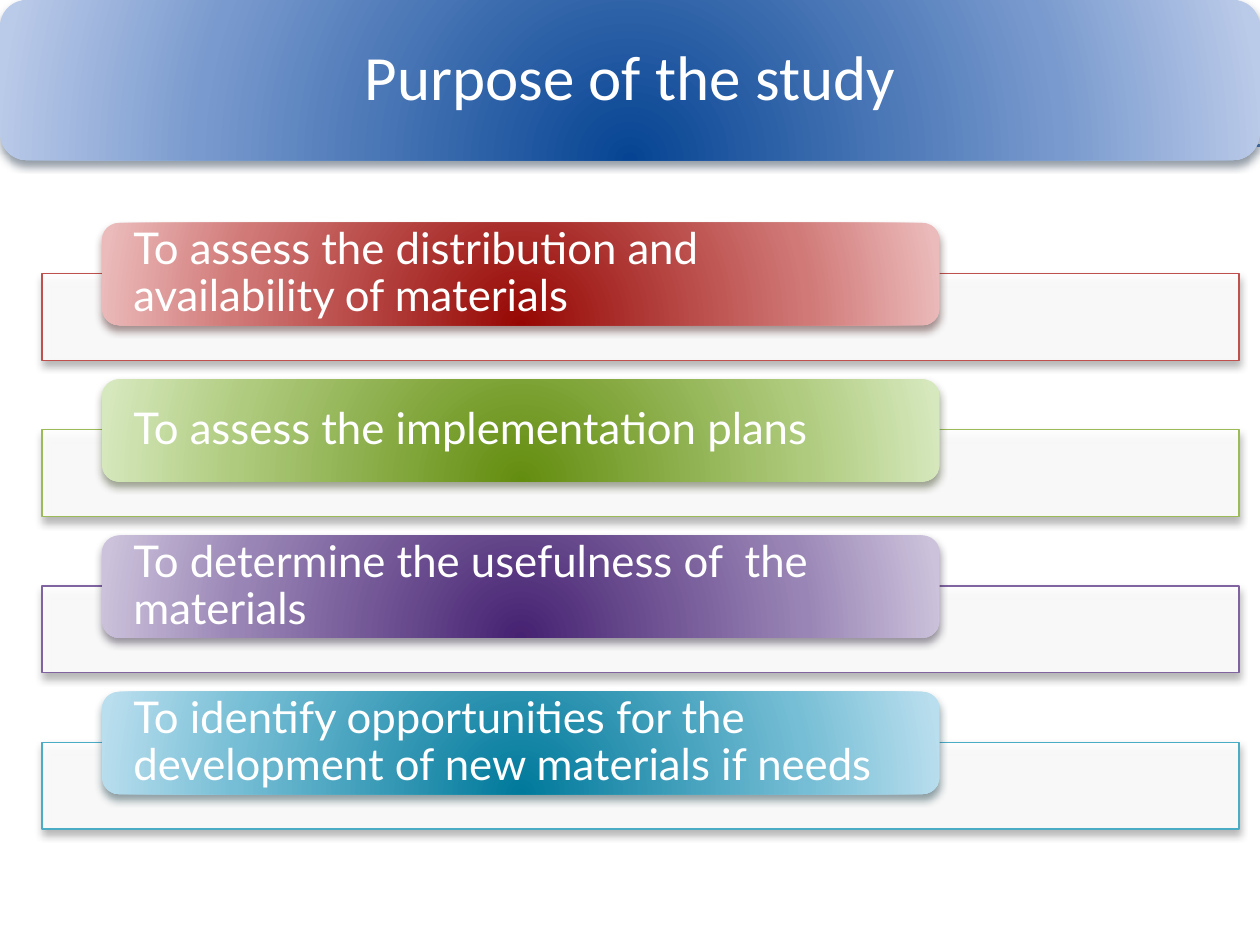
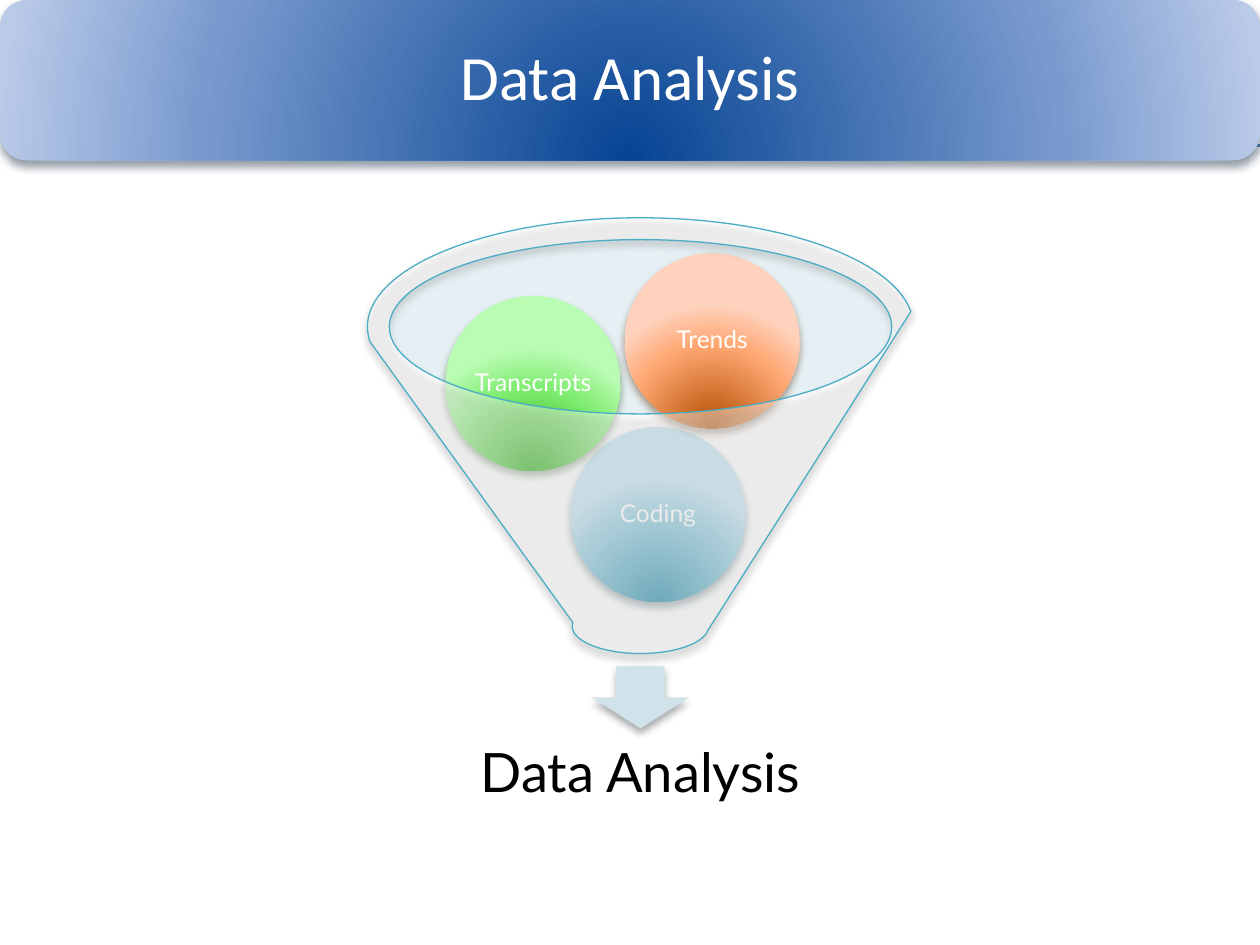
"""Builds two slides: the purpose of a study and its data analysis."""
from dataclasses import dataclass

from lxml import etree
from pptx import Presentation
from pptx.dml.color import RGBColor
from pptx.enum.shapes import MSO_CONNECTOR, MSO_SHAPE
from pptx.enum.text import MSO_ANCHOR, MSO_AUTO_SIZE, PP_ALIGN
from pptx.oxml import parse_xml
from pptx.oxml.ns import nsdecls, qn
from pptx.util import Pt

RECT, ROUND = MSO_SHAPE.RECTANGLE, MSO_SHAPE.ROUNDED_RECTANGLE
OVAL, DOWN, FUNNEL = MSO_SHAPE.OVAL, MSO_SHAPE.DOWN_ARROW, MSO_SHAPE.FUNNEL
STRAIGHT = MSO_CONNECTOR.STRAIGHT
LEFT, CENTER = PP_ALIGN.LEFT, PP_ALIGN.CENTER
MIDDLE, NO_FIT = MSO_ANCHOR.MIDDLE, MSO_AUTO_SIZE.NONE
STOPS = (0, 68, 100)


@dataclass(frozen=True)
class Theme:
    """Colours, fonts and type sizes of both slides."""
    head_font: str = "Calibri"
    body_font: str = "Lato"
    title_size: int = 36
    caption_size: int = 31
    goal_size: int = 25
    ball_size: int = 14
    hairline: float = 0.75
    white: str = "FFFFFF"
    black: str = "000000"
    rule: str = "4F81BD"
    red: str = "C0504D"
    olive: str = "9BBB59"
    purple: str = "8064A2"
    aqua: str = "4BACC6"
    rim: str = "C1DBE5"
    arrow: str = "D0E3EA"
    arrow_shadow: str = "495052"
    grey_shadow: str = "5A5A5A"
    blue_glow: tuple = ("064493", "799ACE", "BACAE9", "1B2D43")
    red_glow: tuple = ("960703", "D07977", "EBBABA", "441B1A")
    olive_glow: tuple = ("638D0F", "AFCB7E", "D6E8BD", "37421E")
    purple_glow: tuple = ("462272", "9A86B6", "CCC2DB", "2D2339")
    aqua_glow: tuple = ("00799B", "76BED5", "B9DEEE", "193D47")
    green_glow: tuple = ("1AA700", "81ED72", "BBFCB5", "215017")
    orange_glow: tuple = ("B34E00", "FFA873", "FFD2BD", "583517")


T = Theme()


def rgb(color):
    """Turn a hex string into a colour."""
    return RGBColor.from_string(color)


def write(sp, text, size, font=T.body_font, color=T.white, align=CENTER,
          inset=(0, 0), wrap=True):
    """Put one formatted paragraph, centred in height, into a shape."""
    tf = sp.text_frame
    tf.auto_size, tf.word_wrap, tf.vertical_anchor = NO_FIT, wrap, MIDDLE
    tf.margin_left = tf.margin_right = Pt(inset[0])
    tf.margin_top = tf.margin_bottom = Pt(inset[1])
    p = tf.paragraphs[0]
    p.alignment, p.line_spacing = align, 0.9
    r = p.add_run()
    r.text = text
    r.font.name, r.font.size = font, Pt(size)
    r.font.color.rgb = rgb(color)


def add_shadow(sp, color):
    """Give a shape a soft shadow that falls straight down."""
    sp.element.spPr.find(qn("a:effectLst")).append(parse_xml(
        f'<a:outerShdw {nsdecls("a")} blurRad="{Pt(4.5)}" dist="{Pt(3)}" '
        f'dir="5400000" rotWithShape="0"><a:srgbClr val="{color}">'
        '<a:alpha val="48000"/></a:srgbClr></a:outerShdw>'))


def add_shape(s, kind, box, fill=None, alpha=100, line=None, shadow=None):
    """Add a preset shape with a plain fill, an outline and a shadow."""
    sp = s.shapes.add_shape(kind, *map(Pt, box))
    sp.shadow.inherit = False
    if fill:
        sp.fill.solid()
        sp.fill.fore_color.rgb = rgb(fill)
    if alpha < 100:
        clr = sp.element.spPr.find(qn("a:solidFill"))[0]
        etree.SubElement(clr, qn("a:alpha")).set("val", str(alpha * 1000))
    if line:
        sp.line.color.rgb, sp.line.width = rgb(line), Pt(T.hairline)
    else:
        sp.line.fill.background()
    if shadow:
        add_shadow(sp, shadow)
    return sp


def add_glow_shape(s, kind, box, glow):
    """Add a shape whose radial gradient rises from below its lower edge."""
    *colors, shadow = glow
    sp = add_shape(s, kind, box, shadow=shadow)
    stops = "".join(f'<a:gs pos="{pos * 1000}"><a:srgbClr val="{c}"/></a:gs>'
                    for pos, c in zip(STOPS, colors))
    sp.element.spPr.find(qn("a:prstGeom")).addnext(parse_xml(
        f'<a:gradFill {nsdecls("a")} rotWithShape="1"><a:gsLst>{stops}</a:gsLst>'
        '<a:path path="circle"><a:fillToRect l="50000" t="130000" r="50000" '
        'b="-30000"/></a:path></a:gradFill>'))
    return sp


def add_title_slide(prs, title):
    """Add a slide with the double rule, the blue band and its title."""
    s = prs.slides.add_slide(prs.slide_layouts[5])
    for y in (82.8, 83.5):
        rule = s.shapes.add_connector(STRAIGHT, Pt(40), Pt(y), Pt(720), Pt(y))
        rule.line.color.rgb, rule.line.width = rgb(T.rule), Pt(T.hairline)
        etree.SubElement(rule.element.spPr, qn("a:effectLst"))
    band = add_glow_shape(s, ROUND, (0, 0, 720, 91.5), T.blue_glow)
    head = s.shapes.title
    head.left, head.top, head.width, head.height = map(Pt, (4.5, 4.5, 711, 82.5))
    write(head, title, T.title_size, font=T.head_font, inset=(11, 11))
    band.element.addnext(head.element)
    return s


def add_goals(s, box, goals):
    """Stack goals in a box, each a coloured tab over an outlined bar."""
    x, y, w, h = box
    bar_drop, bar_h = 28.9, 49.6
    step = (h - bar_drop - bar_h) / (len(goals) - 1)
    for i, (text, line, glow) in enumerate(goals):
        top = y + i * step
        add_shape(s, RECT, (x, top + bar_drop, w, bar_h), T.white, 90, line,
                  T.grey_shadow)
        tab = add_glow_shape(s, ROUND, (x + w * 0.05, top, w * 0.7, 58.5), glow)
        write(tab, text, T.goal_size, align=LEFT, inset=(15.2, 0))


def add_funnel(s, box, balls, caption):
    """Draw balls falling through a funnel to a caption below it."""
    x, y, w, h = box
    mid, ball = x + w / 2, 100
    add_shape(s, OVAL, (mid - 143.5, y + 12.2, 287, 100), T.rim, 40)
    add_shape(s, DOWN, (mid - 27.7, y + h + 7.3, 55.4, 35.5), T.arrow,
              shadow=T.arrow_shadow)
    label = s.shapes.add_textbox(*map(Pt, (mid - 133.5, y + h + 36, 267, 67)))
    write(label, caption, T.caption_size, color=T.black, inset=(17, 17))
    for text, dx, dy, glow in balls:
        sp = add_glow_shape(s, OVAL, (x + dx, y + dy, ball, ball), glow)
        write(sp, text, T.ball_size, wrap=False)
    add_shape(s, FUNNEL, box, T.white, 40, T.aqua, T.grey_shadow)


def main():
    """Build both slides and save the file."""
    prs = Presentation()
    prs.slide_width, prs.slide_height = Pt(720), Pt(540)
    s = add_title_slide(prs, "Purpose of the study")
    add_goals(s, (24, 127.4, 684, 346.4), [
        ("To assess the distribution and availability of materials",
         T.red, T.red_glow),
        ("To assess the implementation plans", T.olive, T.olive_glow),
        ("To determine the usefulness of  the materials",
         T.purple, T.purple_glow),
        ("To identify opportunities for the development of new materials "
         "if needs", T.aqua, T.aqua_glow),
    ])
    s = add_title_slide(prs, "Data Analysis")
    add_funnel(s, (210, 124.5, 312, 249), [
        ("Coding", 116, 119.5, T.aqua_glow),
        ("Transcripts", 44.6, 44.6, T.green_glow),
        ("Trends", 147, 20.2, T.orange_glow),
    ], "Data Analysis")
    prs.save("out.pptx")


if __name__ == "__main__":
    main()
